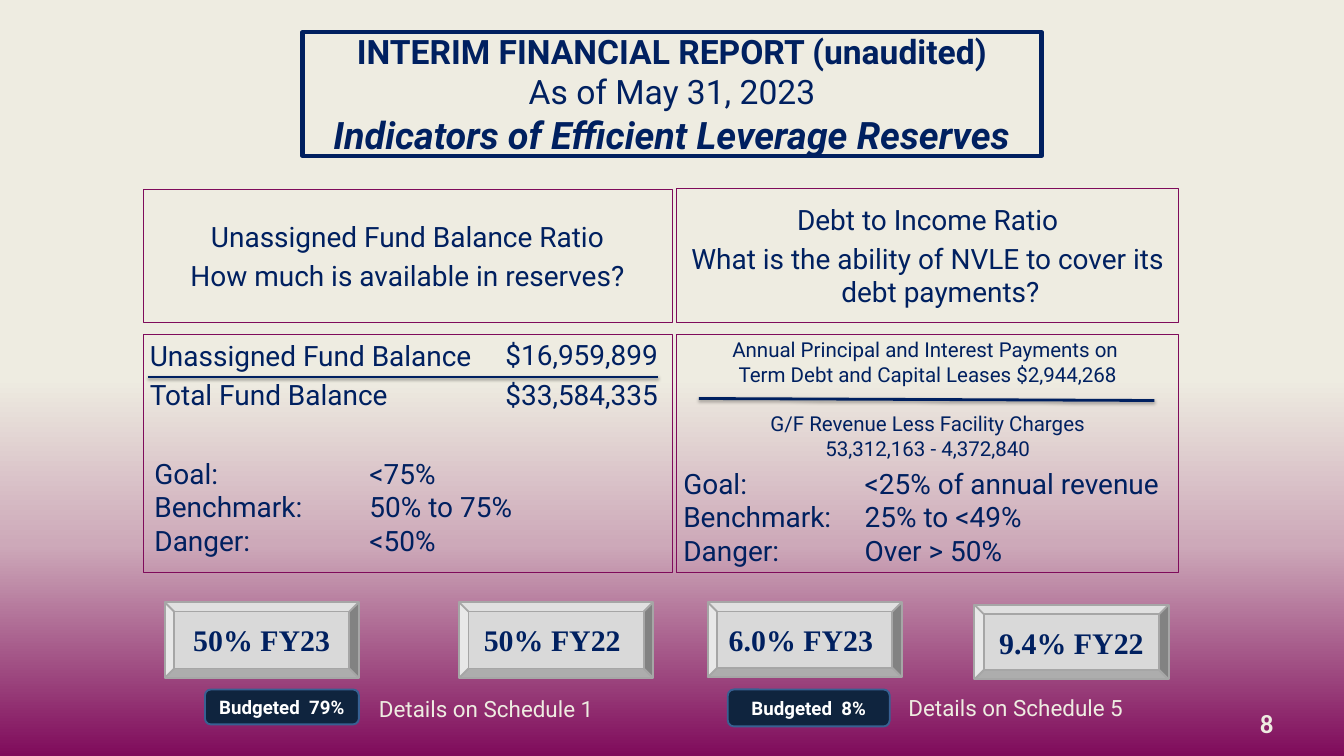
from copy import deepcopy

from lxml import etree
from pptx import Presentation
from pptx import util as u
from pptx.dml.color import RGBColor
from pptx.enum import shapes, text
from pptx.oxml.ns import qn

NAVY, PLUM, CREAM, ROSE = "002060", "7F0B5B", "EEECE1", "CDA9B9"
LEFT, CENTER, RIGHT = text.PP_ALIGN.LEFT, text.PP_ALIGN.CENTER, text.PP_ALIGN.RIGHT
TOP, MIDDLE = text.MSO_ANCHOR.TOP, text.MSO_ANCHOR.MIDDLE


def rgb(color):
    """Turn a hex string into a colour."""
    return RGBColor.from_string(color)


def place(shape, box):
    """Move a shape to a box of left, top, width and height in inches."""
    shape.left, shape.top, shape.width, shape.height = map(u.Inches, box)


def outline(shape, color, width):
    """Give a shape a solid outline."""
    shape.line.color.rgb = rgb(color)
    shape.line.width = u.Pt(width)


def write(shape, lines, size, color=NAVY, bold=False, font="Roboto", align=LEFT,
          anchor=TOP, before=0, hanging=0):
    """Fill a shape with unbulleted paragraphs."""
    frame = shape.text_frame
    frame.text = "\n".join(lines)
    frame.word_wrap = True
    frame.auto_size = text.MSO_AUTO_SIZE.NONE
    frame.vertical_anchor = anchor
    for paragraph in frame.paragraphs:
        paragraph.alignment = align
        paragraph.space_before = u.Pt(before)
        for run in paragraph.runs:
            run.font.size, run.font.bold, run.font.name = u.Pt(size), bold, font
            run.font.color.rgb = rgb(color)
        properties = paragraph._p.get_or_add_pPr()
        properties.set("marL", str(u.Inches(hanging)))
        properties.set("indent", str(u.Inches(-hanging)))
        etree.SubElement(properties, qn("a:buNone"))


def textbox(slide, box, lines, size, **style):
    """Add a text box."""
    label = slide.shapes.add_textbox(*map(u.Inches, box))
    write(label, lines, size, **style)
    return label


def remove_margins(frame):
    """Let text reach the edges of its frame."""
    frame.margin_left = frame.margin_top = frame.margin_right = frame.margin_bottom = 0


def badge(slide, kind, box, caption, size, fill, line, **style):
    """Add a filled preset shape with a bold centred caption."""
    button = slide.shapes.add_shape(kind, *map(u.Inches, box))
    button.shadow.inherit = False
    button.fill.solid()
    button.fill.fore_color.rgb = rgb(fill)
    outline(button, line, 2)
    write(button, [caption], size, bold=True, align=CENTER, anchor=MIDDLE, **style)


def fraction_bar(slide, start, end):
    """Draw the line between numerator and denominator, with a soft shadow."""
    bar = slide.shapes.add_connector(shapes.MSO_CONNECTOR.STRAIGHT, *map(u.Inches, start + end))
    outline(bar, NAVY, 3)
    effects = etree.SubElement(bar._element.spPr, qn("a:effectLst"))
    shadow = etree.SubElement(effects, qn("a:outerShdw"), blurRad=str(u.Pt(3.1)),
                              dist=str(u.Pt(1.8)), dir="5400000", rotWithShape="0")
    black = etree.SubElement(shadow, qn("a:srgbClr"), val="000000")
    etree.SubElement(black, qn("a:alpha"), val="35000")


def background(slide):
    """Paint the cream to plum gradient behind the slide."""
    fill = slide.background.fill
    fill.gradient()
    fill.gradient_angle = 270
    stop_list = next(slide.element.iter(qn("a:gsLst")))
    stop_list.insert(1, deepcopy(stop_list[0]))
    for stop, position, color in zip(fill.gradient_stops, (0.5, 0.72, 1), (CREAM, ROSE, PLUM)):
        stop.position = position
        stop.color.rgb = rgb(color)


def report_title(title, box):
    """Write the framed three-line title."""
    place(title, box)
    outline(title, NAVY, 4.5)
    write(title, ["INTERIM FINANCIAL REPORT (unaudited)\vAs of May 31, 2023\v"
                  "Indicators of Efficient Leverage Reserves"], 36, align=CENTER, anchor=MIDDLE)
    remove_margins(title.text_frame)
    report, _, indicators = title.text_frame.paragraphs[0].runs
    report.font.bold = indicators.font.bold = indicators.font.italic = True
    indicators.font.size = u.Pt(40.5)


def panel(holder, box, lines, size, **style):
    """Write a framed panel that shows the background through it."""
    place(holder, box)
    outline(holder, PLUM, 0.75)
    write(holder, lines, size, **style)


def thresholds(slide, box, value_offset, values):
    """List the goal, benchmark and danger levels in two aligned columns."""
    left, top, width, height = box
    textbox(slide, (left, top, value_offset, height), ["Goal:", "Benchmark:", "Danger:"], 30)
    textbox(slide, (left + value_offset, top, width - value_offset, height), values, 30)


def result_row(slide, results, budget, details):
    """Add the bevelled results, the budget badge and the schedule reference."""
    for box, caption in results:
        badge(slide, shapes.MSO_SHAPE.BEVEL, box, caption, 32, "D9D9D9", "A6A6A6",
              font="Times New Roman")
    budget_box, budgeted = budget
    badge(slide, shapes.MSO_SHAPE.ROUNDED_RECTANGLE, budget_box, budgeted, 20,
          "0F243E", "376092", color="FFFFFF")
    details_box, schedule = details
    textbox(slide, details_box, [schedule], 24, color=CREAM)


def main():
    """Build the leverage reserves slide."""
    deck = Presentation()
    deck.slide_width, deck.slide_height = u.Inches(20), u.Inches(11.25)
    slide = deck.slides.add_slide(deck.slide_layouts[4])
    title, fund_question, fund_ratio, debt_question, debt_ratio = slide.placeholders

    background(slide)
    report_title(title, (4.5, 0.48, 11, 1.84))

    question_style = {"align": CENTER, "anchor": MIDDLE, "before": 6, "hanging": 0.38}
    panel(fund_question, (2.13, 2.82, 7.87, 1.98),
          ["Unassigned Fund Balance Ratio", "How much is available in reserves?"],
          30, **question_style)
    panel(debt_question, (10.07, 2.8, 7.47, 2),
          ["Debt to Income Ratio", "What is the ability of NVLE to cover its debt payments?"],
          30, **question_style)

    panel(fund_ratio, (2.13, 4.98, 7.87, 3.54),
          ["Unassigned Fund Balance", "Total Fund Balance"], 30, before=6)
    textbox(slide, (7.2, 4.98, 2.69, 1.3), ["$16,959,899", "$33,584,335"], 30,
            align=RIGHT, before=6)
    panel(debt_ratio, (10.07, 4.97, 7.47, 3.54),
          ["Annual Principal and Interest Payments on ",
           "Term Debt and Capital Leases $2,944,268",
           "G/F Revenue Less Facility Charges", "53,312,163 - 4,372,840"], 22, align=CENTER)
    debt_ratio.text_frame.paragraphs[2].space_before = u.Pt(26)

    fraction_bar(slide, (2.2, 5.61), (9.79, 5.61))
    fraction_bar(slide, (10.4, 5.93), (17.18, 5.96))

    thresholds(slide, (2.2, 6.74, 7.8, 1.62), 3.2, ["<75%", "50% to 75%", "<50%"])
    thresholds(slide, (10.07, 6.89, 7.47, 1.62), 2.7,
               ["<25% of annual revenue", "25% to <49%", "Over > 50%"])

    result_row(slide, [((2.45, 8.96, 2.89, 1.13), "50% FY23"),
                       ((6.83, 8.96, 2.89, 1.13), "50% FY22 ")],
               ((3.05, 10.26, 2.29, 0.52), "Budgeted  79%"),
               ((5.54, 10.3, 3.48, 0.5), "Details on Schedule 1"))
    result_row(slide, [((10.53, 8.96, 2.89, 1.12), "6.0% FY23 "),
                       ((14.5, 9, 2.89, 1.11), "9.4% FY22")],
               ((10.83, 10.26, 2.41, 0.55), "Budgeted  8%"),
               ((13.42, 10.28, 3.83, 0.5), "Details on Schedule 5"))

    page_number = textbox(slide, (18.53, 10.52, 0.42, 0.47), ["8"], 28, color=CREAM,
                          bold=True, font="Calibri", align=RIGHT)
    remove_margins(page_number.text_frame)

    deck.save("out.pptx")


if __name__ == "__main__":
    main()
